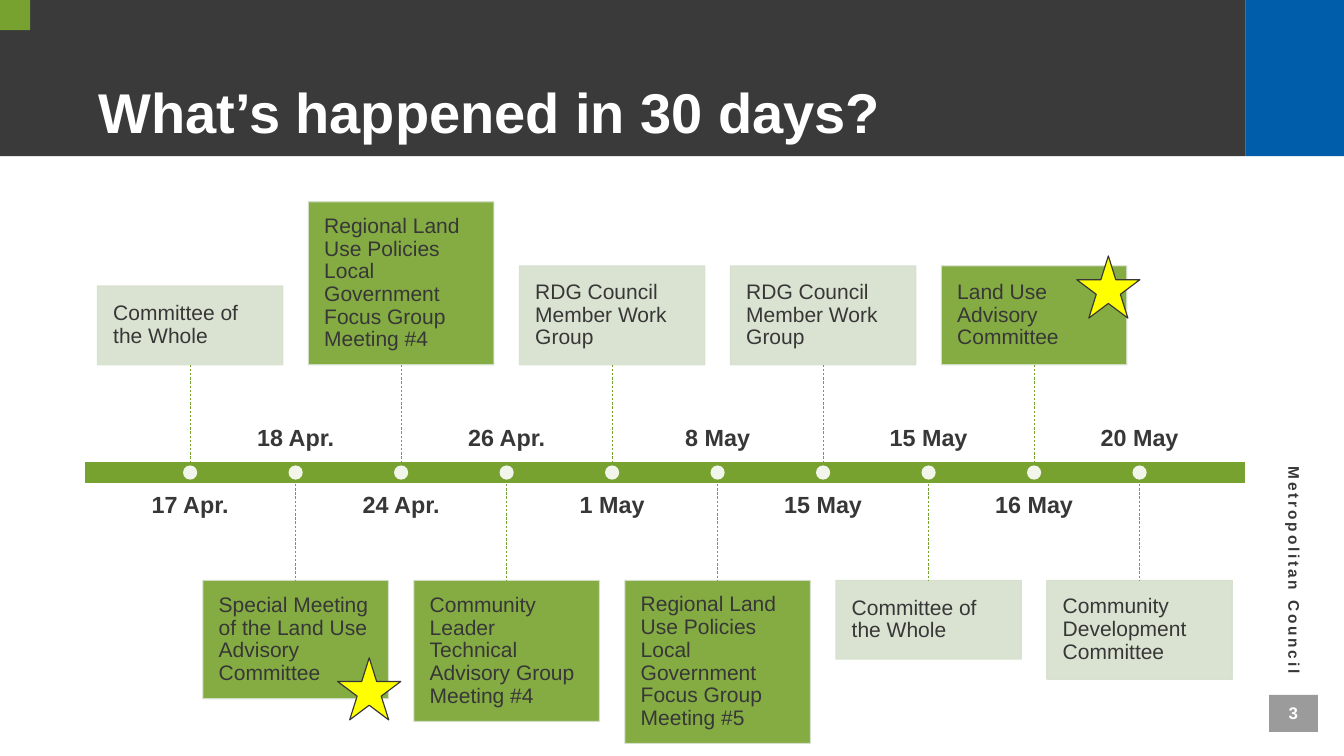
from lxml import etree
from pptx import Presentation
from pptx.dml.color import RGBColor
from pptx.enum.dml import MSO_LINE
from pptx.enum.shapes import MSO_CONNECTOR, MSO_SHAPE
from pptx.enum.text import MSO_ANCHOR, PP_ALIGN
from pptx.oxml.ns import qn
from pptx.util import Cm, Pt

RECT, OVAL, STAR = MSO_SHAPE.RECTANGLE, MSO_SHAPE.OVAL, MSO_SHAPE.STAR_5_POINT
TOP, MID, BASE = MSO_ANCHOR.TOP, MSO_ANCHOR.MIDDLE, MSO_ANCHOR.BOTTOM
LEFT, CENTER, RIGHT = PP_ALIGN.LEFT, PP_ALIGN.CENTER, PP_ALIGN.RIGHT
DASH, LINE = MSO_LINE.DASH, MSO_CONNECTOR.STRAIGHT

WHITE = RGBColor(0xFF, 0xFF, 0xFF)
INK = RGBColor(0x37, 0x37, 0x37)
DARK = RGBColor(0x3A, 0x3A, 0x3A)
BLUE = RGBColor(0x00, 0x5D, 0xAA)
GRAY = RGBColor(0x9B, 0x9B, 0x9B)
GREEN = RGBColor(0x78, 0xA2, 0x2F)
PALE = RGBColor(0xD6, 0xE0, 0xCD)
YELLOW = RGBColor(0xFF, 0xFF, 0x00)

TITLE = "What’s happened in 30 days?"
OWNER = "Metropolitan Council"
PAGE = "3"
EVENTS = [
    ("17 Apr.", "Committee of the Whole", PALE, 2.38),
    ("18 Apr.", "Special Meeting of the Land Use Advisory Committee", GREEN, 3.58),
    ("24 Apr.", "Regional Land Use Policies Local Government Focus Group Meeting #4", GREEN, 4.93),
    ("26 Apr.", "Community Leader Technical Advisory Group Meeting #4", GREEN, 4.27),
    ("1 May", "RDG Council Member Work Group", PALE, 2.99),
    ("8 May", "Regional Land Use Policies Local Government Focus Group Meeting #5", GREEN, 4.93),
    ("15 May", "RDG Council Member Work Group", PALE, 2.99),
    ("15 May", "Committee of the Whole", PALE, 2.38),
    ("16 May", "Land Use Advisory Committee", GREEN, 2.99),
    ("20 May", "Community Development Committee", PALE, 2.99),
]
STARS = [(10.21, 19.89), (32.56, 7.74)]

FIRST, STEP = 5.75, 3.19
AXIS, BAR = 14.29, 0.69
REACH = 3.26
BOX_W = 5.61
DATE_W, DATE_H, DATE_GAP = 5.1, 1.93, 0.63
DOT = 0.43

deck = Presentation()
deck.slide_width, deck.slide_height = Cm(40.64), Cm(22.86)
slide = deck.slides.add_slide(deck.slide_layouts[6])
shapes = slide.shapes


def draw(kind, x, y, w, h, fill, edge=None, width=1, alpha=None):
    shape = shapes.add_shape(kind, Cm(x), Cm(y), Cm(w), Cm(h))
    shape.shadow.inherit = False
    shape.fill.solid()
    shape.fill.fore_color.rgb = fill
    if edge is None:
        shape.line.fill.background()
    else:
        shape.line.color.rgb = edge
        shape.line.width = Pt(width)
    if alpha:
        for color in list(shape._element.spPr.iter(qn("a:srgbClr"))):
            etree.SubElement(color, qn("a:alpha")).set("val", str(alpha * 1000))
    return shape


def area(x, y, w, h):
    return shapes.add_textbox(Cm(x), Cm(y), Cm(w), Cm(h))


def write(shape, text, size=18, color=INK, bold=False, align=LEFT,
          anchor=TOP, inset=(0.25, 0.13), lead=0.9, track=None):
    frame = shape.text_frame
    frame.word_wrap = True
    frame.vertical_anchor = anchor
    frame.margin_left = frame.margin_right = Cm(inset[0])
    frame.margin_top = frame.margin_bottom = Cm(inset[1])
    para = frame.paragraphs[0]
    para.alignment = align
    para.line_spacing = lead
    run = para.add_run()
    run.text = text
    font = run.font
    font.name, font.size, font.bold = "Arial", Pt(size), bold
    font.color.rgb = color
    if track:
        run._r.get_or_add_rPr().set("spc", str(track))


def link(x, start, end):
    line = shapes.add_connector(LINE, Cm(x), Cm(start), Cm(x), Cm(end))
    line.line.color.rgb = GREEN
    line.line.width = Pt(0.5)
    line.line.dash_style = DASH
    etree.SubElement(line._element.spPr, qn("a:effectLst"))


def event(x, above, date, text, fill, high):
    if above:
        box_y, date_y = AXIS - REACH - high, AXIS - BAR / 2 - DATE_GAP / 2 - DATE_H
        ends = AXIS - REACH, AXIS - BAR / 2
        anchor = BASE
    else:
        box_y, date_y = AXIS + REACH, AXIS + BAR / 2 + DATE_GAP / 2
        ends = AXIS + BAR / 2, AXIS + REACH
        anchor = TOP
    date_y = 11.71 if anchor == BASE else 14.91
    box = draw(RECT, x - BOX_W / 2, box_y, BOX_W, high, fill, PALE, alpha=90)
    write(box, text, anchor=MID, inset=(0.48, 0.48))
    link(x, *ends)
    return date_y


def label(x, above, date):
    if above:
        y, anchor = AXIS - BAR / 2 - 0.3 - DATE_H, BASE
    else:
        y, anchor = AXIS + BAR / 2 + 0.28, TOP
    write(area(x - DATE_W / 2, y, DATE_W, DATE_H), date, size=20, bold=True,
          align=CENTER, anchor=anchor, inset=(0, 0))


draw(RECT, 37.67, 0, 2.97, 4.72, BLUE)
draw(RECT, 0, 0, 37.67, 4.72, DARK)
draw(RECT, 38.38, 21.01, 1.47, 1.12, GRAY)
draw(RECT, 0, 0, 0.91, 0.91, GREEN)
write(area(38.4, 21.13, 1.42, 0.86), PAGE, size=14.4, color=WHITE, bold=True,
      align=CENTER, lead=1)
side = area(28.85, 9.91, 20.6, 0.81)
side.rotation = 90
write(side, OWNER, size=13.2, bold=True, align=RIGHT, lead=1, track=240)
write(area(2.74, 1.09, 32.82, 3.43), TITLE, size=48, color=WHITE, bold=True,
      anchor=BASE)

draw(RECT, 2.54, AXIS - BAR / 2, 35.13, BAR, GREEN, WHITE, 1.5)
for i, (date, text, fill, high) in enumerate(EVENTS):
    x, above = FIRST + i * STEP, i % 2 == 0
    event(x, above, date, text, fill, high)
    label(x, not above, date)
    draw(OVAL, x - DOT / 2, AXIS - DOT / 2, DOT, DOT, WHITE, alpha=90)

for x, y in STARS:
    draw(STAR, x, y, 1.91, 1.88, YELLOW, INK)

deck.save("out.pptx")
